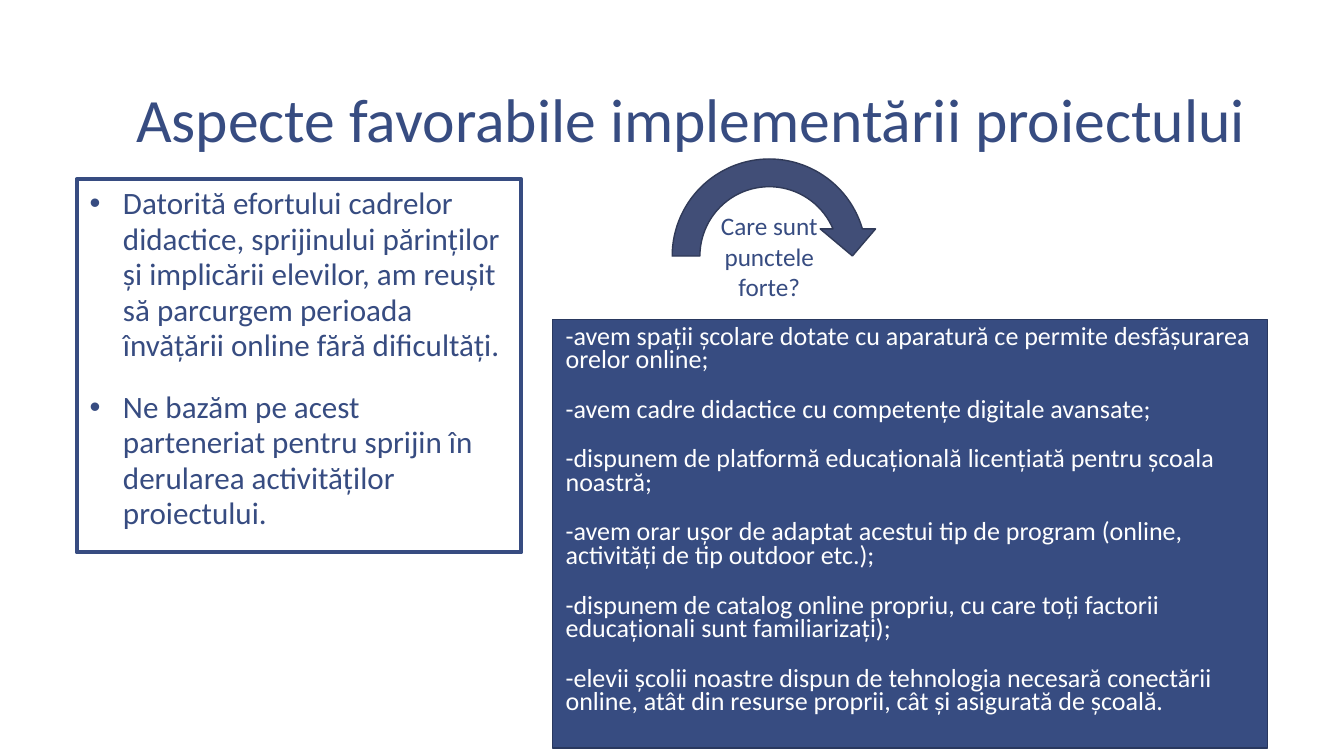
import pptx
import pptx.dml.color
import pptx.enum.shapes
import pptx.enum.text
import pptx.oxml.ns
import pptx.util
from lxml import etree

EMU_PER_PX = 9144
COLOURS = {
    "background": "FFFFFF",
    "navy": "374C81",
    "panel_edge": "29385F",
    "arrow": "414E77",
    "arrow_edge": "303A58",
    "white": "FFFFFF",
}
TITLE = "Aspecte favorabile implementării proiectului"
CONTEXT = [
    "Datorită efortului cadrelor didactice, sprijinului părinților și implicării elevilor, am reușit să parcurgem perioada învățării online fără dificultăți.",
    "Ne bazăm pe acest parteneriat pentru sprijin în derularea activităților proiectului.",
]
QUESTION = "Care sunt punctele forte?"
STRENGTHS = [
    "-avem spații școlare dotate cu aparatură ce permite desfășurarea orelor online;",
    "-avem cadre didactice cu competențe digitale avansate;",
    "-dispunem de platformă educațională licențiată pentru școala noastră;",
    "-avem orar ușor de adaptat acestui tip de program (online, activități de tip outdoor etc.);",
    "-dispunem de catalog online propriu, cu care toți factorii educaționali sunt familiarizați);",
    "-elevii școlii noastre dispun de tehnologia necesară conectării online, atât din resurse proprii, cât și asigurată de școală.",
]


def px(length):
    return pptx.util.Emu(length * EMU_PER_PX)


def colour(key):
    return pptx.dml.color.RGBColor.from_string(COLOURS[key])


def add_bullet(paragraph, indent):
    properties = paragraph._p.get_or_add_pPr()
    properties.set("marL", str(px(indent)))
    properties.set("indent", str(-px(indent)))
    for tag, attribute, value in (("a:buFont", "typeface", "Arial"), ("a:buChar", "char", "•")):
        etree.SubElement(properties, pptx.oxml.ns.qn(tag)).set(attribute, value)


def write(frame, texts, size, ink, spacing=1.0, align="LEFT", anchor="TOP", margins=(13, 7), bulleted=False):
    frame.word_wrap = True
    frame.auto_size = pptx.enum.text.MSO_AUTO_SIZE.NONE
    frame.vertical_anchor = pptx.enum.text.MSO_ANCHOR[anchor]
    frame.margin_left = frame.margin_right = px(margins[0])
    frame.margin_top = frame.margin_bottom = px(margins[1])
    for index, text in enumerate(texts):
        paragraph = frame.paragraphs[0] if index == 0 else frame.add_paragraph()
        if bulleted:
            add_bullet(paragraph, 33)
        paragraph.alignment = pptx.enum.text.PP_ALIGN[align]
        paragraph.line_spacing = spacing
        if index:
            paragraph.space_before = pptx.util.Pt(18.7)
        run = paragraph.add_run()
        run.text = text
        run.font.name = "Calibri"
        run.font.size = pptx.util.Pt(size)
        run.font.color.rgb = colour(ink)


def add_title(slide, box, text):
    title = slide.shapes.add_textbox(*map(px, box))
    write(title.text_frame, [text], 44, "navy", spacing=0.85, anchor="BOTTOM")


def add_panel(slide, preset, box, fill, edge, edge_width):
    panel = slide.shapes.add_shape(pptx.enum.shapes.MSO_SHAPE[preset], *map(px, box))
    panel.shadow.inherit = False
    if fill:
        panel.fill.solid()
        panel.fill.fore_color.rgb = colour(fill)
    else:
        panel.fill.background()
    panel.line.color.rgb = colour(edge)
    panel.line.width = pptx.util.Pt(edge_width)
    return panel.text_frame


def main():
    presentation = pptx.Presentation()
    presentation.slide_width = px(1333)
    presentation.slide_height = px(750)
    slide = presentation.slides.add_slide(presentation.slide_layouts[6])
    slide.background.fill.solid()
    slide.background.fill.fore_color.rgb = colour("background")

    add_title(slide, (122, 8, 1143, 153), TITLE)
    context = add_panel(slide, "RECTANGLE", (76, 178, 441, 370), None, "navy", 3)
    write(context, CONTEXT, 22.2, "navy", spacing=0.95, bulleted=True)
    question = add_panel(slide, "CIRCULAR_ARROW", (653, 144, 220, 220), "arrow", "arrow_edge", 1)
    write(question, [QUESTION], 18, "navy", align="CENTER", anchor="MIDDLE", margins=(10, 5))
    strengths = add_panel(slide, "RECTANGLE", (548, 317, 709, 425), "navy", "panel_edge", 1)
    write(strengths, STRENGTHS, 18.6, "white", spacing=0.75)

    presentation.save("out.pptx")


if __name__ == "__main__":
    main()
